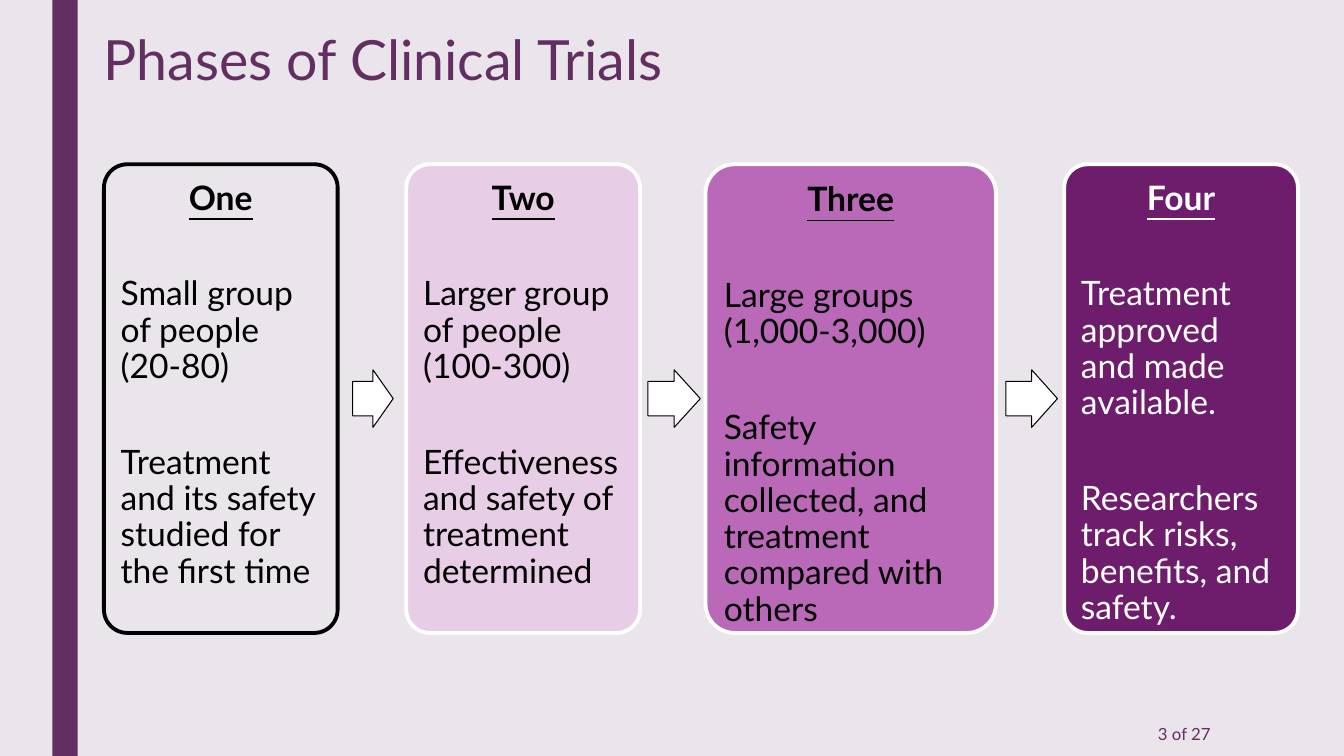
import pptx
import pptx.dml.color
import pptx.enum.shapes
import pptx.enum.text
import pptx.util

Cm, Pt = pptx.util.Cm, pptx.util.Pt
RGBColor = pptx.dml.color.RGBColor
SHAPE = pptx.enum.shapes.MSO_SHAPE
ALIGN = pptx.enum.text.PP_ALIGN
ANCHOR = pptx.enum.text.MSO_ANCHOR

FONT = "Lato"
BACKGROUND = RGBColor(0xEA, 0xE5, 0xEB)
PLUM = RGBColor(0x63, 0x2E, 0x62)
BLACK = RGBColor(0x00, 0x00, 0x00)
WHITE = RGBColor(0xFF, 0xFF, 0xFF)
PALE = RGBColor(0xE8, 0xCD, 0xE7)
ORCHID = RGBColor(0xBA, 0x69, 0xB8)
DEEP = RGBColor(0x6D, 0x1D, 0x6B)

SLIDE_W, SLIDE_H = 33.87, 19.05
CARD_TOP, CARD_H = 4.14, 11.81
ARROW_H = 1.45

# left, width, fill, line, text colour, heading, paragraphs
PHASES = [
    (2.62, 5.89, None, BLACK, BLACK, "One",
     ["Small group of people (20-80)",
      "Treatment and its safety studied for the first time"]),
    (10.24, 5.89, PALE, WHITE, BLACK, "Two",
     ["Larger group of people (100-300)",
      "Effectiveness and safety of treatment determined"]),
    (17.78, 7.32, ORCHID, WHITE, BLACK, "Three",
     ["Large groups (1,000-3,000)",
      "Safety information collected, and treatment compared with others"]),
    (26.82, 5.89, DEEP, WHITE, WHITE, "Four",
     ["Treatment approved and made available.",
      "Researchers track risks, benefits, and safety."]),
]
# left, width
ARROWS = [(8.89, 1.02), (16.33, 1.32), (25.35, 1.3)]


def write(p, text, size=24, color=BLACK, bold=False, underline=False,
          align=ALIGN.LEFT, spacing=0.9, before=0):
    p.alignment = align
    p.line_spacing = spacing
    p.space_before = Pt(before)
    r = p.add_run()
    r.text = text
    font = r.font
    font.name, font.size, font.color.rgb = FONT, Pt(size), color
    font.bold, font.underline = bold, underline


def add_block(slide, kind, box, fill=None, line=None, weight=0.75):
    sp = slide.shapes.add_shape(kind, *map(Cm, box))
    sp.shadow.inherit = False
    if fill is None:
        sp.fill.background()
    else:
        sp.fill.solid()
        sp.fill.fore_color.rgb = fill
    if line is None:
        sp.line.fill.background()
    else:
        sp.line.color.rgb = line
        sp.line.width = Pt(weight)
    return sp


def add_title(slide, box, text):
    sp = slide.shapes.title
    sp.left, sp.top, sp.width, sp.height = map(Cm, box)
    tf = sp.text_frame
    tf.auto_size = pptx.enum.text.MSO_AUTO_SIZE.NONE
    tf.vertical_anchor = ANCHOR.TOP
    write(tf.paragraphs[0], text, size=39.6, color=PLUM, spacing=0.89)


def add_page_number(slide, box, text):
    tf = slide.shapes.add_textbox(*map(Cm, box)).text_frame
    tf.word_wrap = True
    tf.vertical_anchor = ANCHOR.MIDDLE
    write(tf.paragraphs[0], text, size=12, color=PLUM, align=ALIGN.RIGHT,
          spacing=1.0)


def add_phase_card(slide, box, fill, line, color, heading, paragraphs):
    sp = add_block(slide, SHAPE.ROUNDED_RECTANGLE, box, fill, line, 2.75)
    sp.adjustments[0] = 0.1
    tf = sp.text_frame
    tf.word_wrap = True
    tf.vertical_anchor = ANCHOR.TOP
    tf.margin_left = tf.margin_right = Cm(0.25)
    tf.margin_top = tf.margin_bottom = Cm(0.25)
    write(tf.paragraphs[0], heading, color=color, bold=True, underline=True,
          align=ALIGN.CENTER)
    for text in paragraphs:
        write(tf.add_paragraph(), text, color=color, before=42.6)


def add_arrow(slide, box):
    sp = add_block(slide, SHAPE.RIGHT_ARROW, box, WHITE, BLACK)
    sp.adjustments[0], sp.adjustments[1] = 0.6, 0.5


def add_phase_flow(slide, top, height):
    """Place the phase cards in a row with arrows centred on their height."""
    for left, width, *style in PHASES:
        add_phase_card(slide, (left, top, width, height), *style)
    for left, width in ARROWS:
        add_arrow(slide, (left, top + (height - ARROW_H) / 2, width, ARROW_H))


def main():
    prs = pptx.Presentation()
    prs.slide_width, prs.slide_height = Cm(SLIDE_W), Cm(SLIDE_H)
    slide = prs.slides.add_slide(prs.slide_layouts[5])
    slide.background.fill.solid()
    slide.background.fill.fore_color.rgb = BACKGROUND
    add_block(slide, SHAPE.RECTANGLE, (1.32, 0, 0.64, SLIDE_H), PLUM)
    add_title(slide, (2.36, 0.71, 21.46, 1.65), "Phases of Clinical Trials")
    add_phase_flow(slide, CARD_TOP, CARD_H)
    add_page_number(slide, (26.31, 17.93, 4.45, 1.12), "3 of 27")
    prs.save("out.pptx")


if __name__ == "__main__":
    main()
